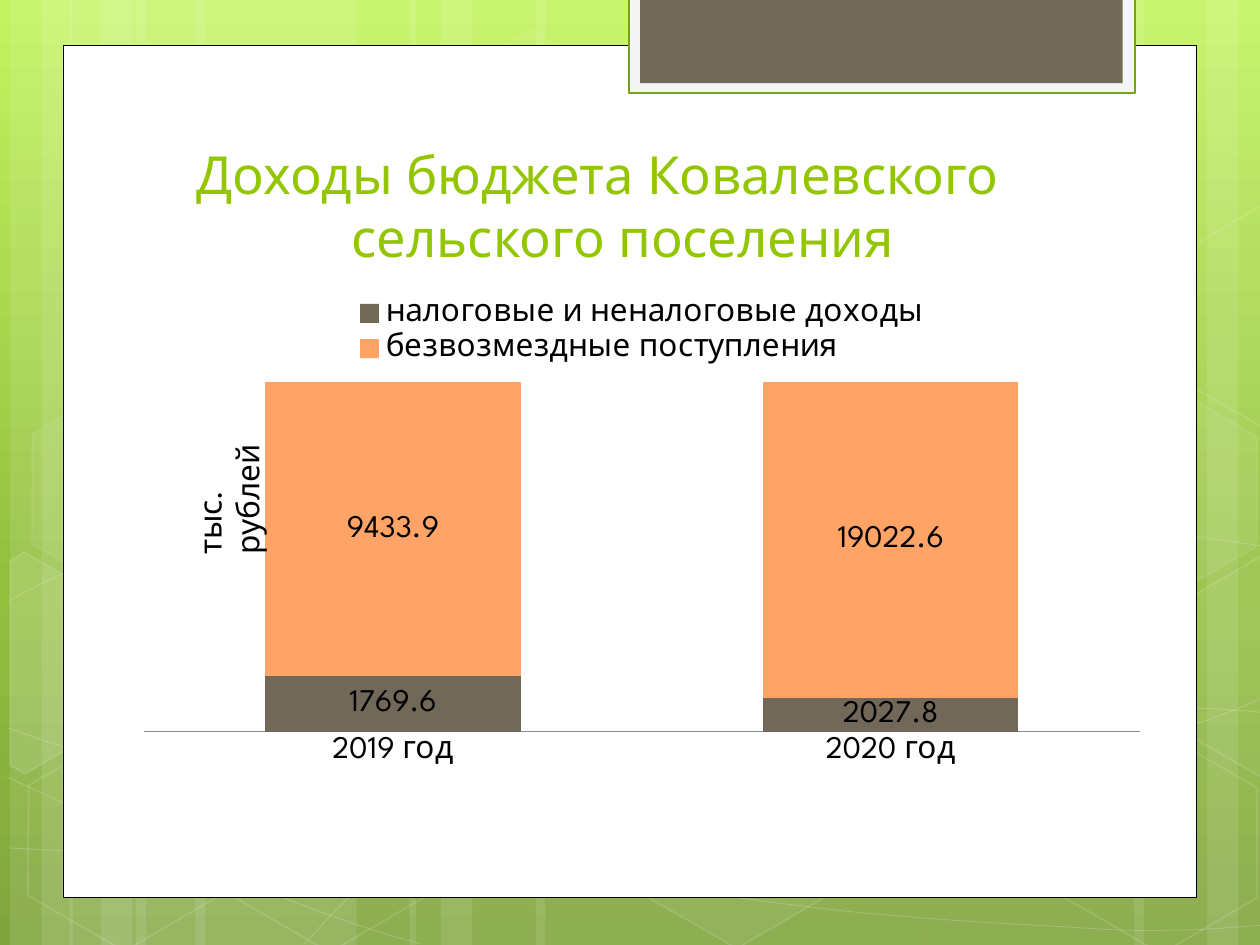
"""Build the slide on budget revenues with a stacked 100% column chart."""
from copy import deepcopy
from math import cos, radians, sin

from lxml.etree import SubElement
from pptx import Presentation
from pptx.chart.data import CategoryChartData
from pptx.dml.color import RGBColor
from pptx.enum.chart import XL_CHART_TYPE, XL_LEGEND_POSITION, XL_TICK_MARK
from pptx.enum.shapes import MSO_SHAPE
from pptx.enum.text import MSO_ANCHOR, PP_ALIGN
from pptx.oxml import parse_xml
from pptx.oxml.ns import nsdecls, qn
from pptx.util import Inches, Pt

FONT = "League Spartan"
WHITE = RGBColor(0xFF, 0xFF, 0xFF)
BLACK = RGBColor(0, 0, 0)
GREEN = RGBColor(0x94, 0xC6, 0x00)
FRAME_GREEN = RGBColor(0x74, 0xA5, 0x10)
PALE = RGBColor(0xF5, 0xF5, 0xF5)
BROWN = RGBColor(0x71, 0x68, 0x5A)
ORANGE = RGBColor(0xFF, 0xA4, 0x66)
GREY = RGBColor(0x8B, 0x8B, 0x8B)
BACKDROP = [
    (0, RGBColor(0xC3, 0xF3, 0x5F)),
    (0.62, RGBColor(0x93, 0xBF, 0x3F)),
    (1, RGBColor(0x81, 0xA5, 0x3E)),
]

TITLE = "Доходы бюджета Ковалевского сельского поселения"
UNIT = "тыс. рублей"
YEARS = ["2019 год", "2020 год"]
REVENUES = [
    ("налоговые и неналоговые доходы", [1769.6, 2027.8], BROWN),
    ("безвозмездные поступления", [9433.9, 19022.6], ORANGE),
]

STRIPES = [
    (1.08, 1.75), (0.08, 0.5), (0.33, 0.83), (1.55, 1.75), (0.55, 0.5), (0.8, 0.83),
    (7.33, 1.75), (9.58, 0.5), (9, 0.83), (4.25, 3.08), (3.25, 0.5), (3.5, 0.83),
]
WAVES = [
    ("CCCC", [
        (0.07, 6.73), (0.61, 6.76), (1.15, 6.79), (1.9, 6.78), (2.65, 6.77), (3.58, 6.75),
        (4.58, 6.65), (5.58, 6.55), (7, 6.36), (7.92, 6.17), (8.83, 5.98), (9.77, 5.68),
        (10.07, 5.51)]),
    ("CCCC", [
        (0.07, 4.77), (0.36, 4.61), (0.65, 4.46), (1.21, 4.31), (1.78, 4.16), (2.59, 3.94),
        (3.47, 3.87), (4.36, 3.8), (5.44, 3.79), (6.54, 3.87), (7.64, 3.95), (9.47, 4.26),
        (10.07, 4.34)]),
    ("C", [(0.06, 6.17), (1.27, 6.72), (2.47, 7.27), (3.34, 7.49)]),
    ("CCCCCC", [
        (0.07, 5.78), (0.38, 5.89), (0.7, 6), (1.28, 6.16), (1.86, 6.31), (2.73, 6.56),
        (3.57, 6.73), (4.4, 6.9), (5.45, 7.08), (6.28, 7.18), (7.11, 7.29), (8, 7.33),
        (8.53, 7.36), (9.05, 7.4), (9.19, 7.38), (9.45, 7.38), (9.71, 7.37), (9.89, 7.35),
        (10.07, 7.34)]),
    ("CCCCCCCLCC", [
        (2.42, 7.49), (2.6, 7.29), (2.78, 7.09), (3.02, 6.91), (3.26, 6.73), (3.6, 6.53),
        (3.88, 6.39), (4.16, 6.25), (4.33, 6.19), (4.7, 6.09), (5.06, 5.99), (5.73, 5.85),
        (6.08, 5.78), (6.44, 5.71), (6.49, 5.71), (6.8, 5.69), (7.11, 5.66), (7.6, 5.63),
        (7.94, 5.62), (8.29, 5.61), (8.86, 5.62), (8.86, 5.62), (9.53, 5.62), (9.71, 5.63),
        (9.88, 5.64), (9.97, 5.65), (10.06, 5.66), (10.03, 5.65), (10.06, 5.66)]),
]
HEXAGONS = [
    (3.34, 0.36, 4, 8), (4.97, 5.89, 6, 12), (0.11, 5.91, 0, 12),
    (0.14, 3.12, 7, 8), (1.74, 5.92, 0, 12), (7.53, 4.53, 10, 12),
    (8.34, 5.93, 0, 12), (8.34, 3.14, 7, 8),
]
TILT = 30
CUT_HEXAGONS = [
    ((0.36, 5.35), 10,
     [(0.08, 4.45), (0.19, 4.38), (0.96, 4.82), (0.95, 5.7), (0.2, 6.14), (0.08, 6.07)]),
    ((9.85, 5.2), 4,
     [(9.26, 4.85), (10.01, 4.41), (10.09, 4.46), (10.09, 6.13), (10.02, 6.17), (9.26, 5.73)]),
    ((9.85, 2.41), 0,
     [(9.26, 2.07), (10.01, 1.63), (10.1, 1.68), (10.09, 3.35), (10.02, 3.39), (9.26, 2.95)]),
]
PANELS = [
    (0.5, 0.36, 9, 6.76, WHITE, BLACK, 0.5),
    (4.99, -0.02, 4.02, 0.76, PALE, FRAME_GREEN, 1.25),
    (5.08, -0.02, 3.83, 0.68, BROWN, None, 0),
]


def fade(shape, parent, opacity):
    for color in shape.element.spPr.findall(f"{parent}/{qn('a:srgbClr')}"):
        SubElement(color, qn("a:alpha")).set("val", str(opacity * 1000))


def paint(shape, fill, line, width=0, fill_opacity=100, line_opacity=100):
    shape.shadow.inherit = False
    if fill is None or fill_opacity == 0:
        shape.fill.background()
    else:
        shape.fill.solid()
        shape.fill.fore_color.rgb = fill
        if fill_opacity < 100:
            fade(shape, qn("a:solidFill"), fill_opacity)
    if line is None:
        shape.line.fill.background()
    else:
        shape.line.color.rgb = line
        shape.line.width = Pt(width)
        if line_opacity < 100:
            fade(shape, f"{qn('a:ln')}/{qn('a:solidFill')}", line_opacity)


def add_preset(slide, preset, left, top, width, height):
    return slide.shapes.add_shape(preset, Inches(left), Inches(top), Inches(width), Inches(height))


def add_outline(slide, points, close):
    start, *rest = [(Inches(x), Inches(y)) for x, y in points]
    builder = slide.shapes.build_freeform(*start)
    builder.add_line_segments(rest, close=close)
    return builder.convert_to_shape()


def add_wave(slide, segments, points):
    wave = add_outline(slide, points, False)
    steps = iter(list(wave.element.iter(qn("a:lnTo"))))
    for segment in segments:
        step = next(steps)
        if segment == "C":
            step.tag = qn("a:cubicBezTo")
            for _ in range(2):
                spare = next(steps)
                step.append(spare[0])
                spare.getparent().remove(spare)
    return wave


def turn_back(point, center):
    dx, dy = point[0] - center[0], point[1] - center[1]
    c, s = cos(radians(TILT)), sin(radians(TILT))
    return center[0] + dx * c + dy * s, center[1] - dx * s + dy * c


def style_font(font, size, color):
    font.name, font.size, font.color.rgb = FONT, Pt(size), color


def add_backdrop(slide):
    fill = slide.background.fill
    fill.gradient()
    fill.gradient_angle = 270
    stop_list = next(slide.element.iter(qn("a:gsLst")))
    stop_list.append(deepcopy(stop_list[0]))
    for stop, (position, color) in zip(fill.gradient_stops, BACKDROP):
        stop.position, stop.color.rgb = position, color
    for left, width in STRIPES:
        paint(add_preset(slide, MSO_SHAPE.RECTANGLE, left, 0, width, 7.5), WHITE, None, fill_opacity=10)
    for segments, points in WAVES:
        paint(add_wave(slide, segments, points), None, WHITE, 0.5, line_opacity=20)
    for left, top, fill_opacity, line_opacity in HEXAGONS:
        hexagon = add_preset(slide, MSO_SHAPE.HEXAGON, left, top, 1.75, 1.52)
        hexagon.adjustments[0] = 0.285
        hexagon.rotation = TILT
        paint(hexagon, WHITE, WHITE, 1, fill_opacity, line_opacity)
    for center, fill_opacity, corners in CUT_HEXAGONS:
        cut = add_outline(slide, [turn_back(corner, center) for corner in corners], True)
        cut.rotation = TILT
        paint(cut, WHITE, WHITE, 1, fill_opacity, 12)
    for left, top, width, height, fill, line, weight in PANELS:
        paint(add_preset(slide, MSO_SHAPE.RECTANGLE, left, top, width, height), fill, line, weight)


def add_title(slide):
    title = slide.shapes.add_textbox(Inches(0.43), Inches(0.92), Inches(9.13), Inches(1.26)).text_frame
    title.word_wrap = True
    title.vertical_anchor = MSO_ANCHOR.BOTTOM
    title.text = TITLE
    paragraph = title.paragraphs[0]
    paragraph.alignment = PP_ALIGN.CENTER
    for side, indent in (("marL", 0.8), ("marR", 0.9), ("indent", -0.4)):
        paragraph._p.get_or_add_pPr().set(side, str(Inches(indent)))
    style_font(paragraph.runs[0].font, 30, GREEN)


def add_revenue_chart(slide):
    data = CategoryChartData()
    data.categories = YEARS
    for name, values, _ in REVENUES:
        data.add_series(name, values)
    chart = slide.shapes.add_chart(
        XL_CHART_TYPE.COLUMN_STACKED_100, Inches(0.98), Inches(2.25), Inches(8.23), Inches(3.91), data
    ).chart
    style_font(chart.font, 18, BLACK)
    chart.has_title = False
    chart.has_legend = True
    chart.legend.position = XL_LEGEND_POSITION.TOP
    chart.legend.include_in_layout = False
    chart.value_axis.visible = False
    chart.value_axis.has_major_gridlines = False
    chart.category_axis.major_tick_mark = XL_TICK_MARK.NONE
    chart.category_axis.format.line.color.rgb = GREY
    plot = chart.plots[0]
    plot.gap_width, plot.overlap, plot.vary_by_categories = 95, 100, False
    for series, (_, _, color) in zip(plot.series, REVENUES):
        series.format.fill.solid()
        series.format.fill.fore_color.rgb = color
        series.data_labels.show_value = True
        style_font(series.data_labels.font, 18, BLACK)
    plot_area = next(chart.element.iter(qn("c:plotArea")))
    for old_layout in plot_area.findall(qn("c:layout")):
        plot_area.remove(old_layout)
    plot_area.insert(0, parse_xml(
        f'<c:layout {nsdecls("c")}><c:manualLayout><c:layoutTarget val="inner"/>'
        '<c:xMode val="edge"/><c:yMode val="edge"/><c:x val="0.02"/><c:y val="0.2"/>'
        '<c:w val="0.96"/><c:h val="0.71"/></c:manualLayout></c:layout>'))


def add_unit(slide):
    unit = slide.shapes.add_textbox(Inches(0.93), Inches(3.57), Inches(1.46), Inches(0.4))
    unit.rotation = 270
    unit.text_frame.word_wrap = True
    unit.text_frame.text = UNIT
    style_font(unit.text_frame.paragraphs[0].runs[0].font, 18, BLACK)


def main():
    deck = Presentation()
    deck.slide_width, deck.slide_height = Inches(10), Inches(7.5)
    slide = deck.slides.add_slide(deck.slide_layouts[6])
    for add_part in (add_backdrop, add_title, add_revenue_chart, add_unit):
        add_part(slide)
    deck.save("out.pptx")


if __name__ == "__main__":
    main()
